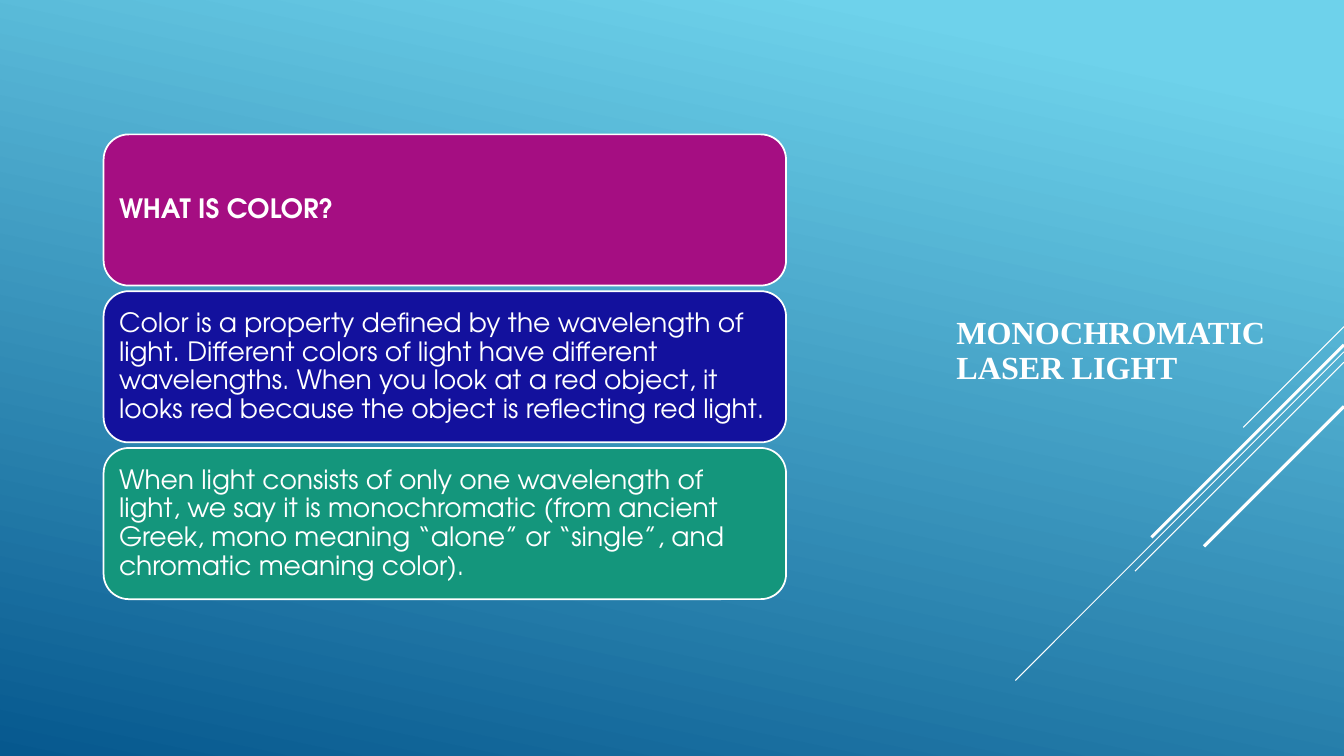
from pptx import Presentation
from pptx.dml.color import RGBColor
from pptx.enum.shapes import MSO_CONNECTOR, MSO_SHAPE
from pptx.enum.text import MSO_ANCHOR, PP_ALIGN
from pptx.oxml.ns import qn
from pptx.util import Pt
from lxml.etree import SubElement

COLORS = {
    "white": "FFFFFF",
    "sky": "6ED2EB",
    "deep": "06588E",
    "magenta": "A50E82",
    "navy": "13119D",
    "green": "14967C",
}
TITLE = "MONOCHROMATIC LASER LIGHT"
CARDS = [
    ("WHAT IS COLOR?", "magenta", True),
    ("Color is a property defined by the wavelength of light. "
     "Different colors of light have different wavelengths. "
     "When you look at a red object, it looks red because the object "
     "is reflecting red light.", "navy", False),
    ("When light consists of only one wavelength of light, we say it is "
     "monochromatic (from ancient Greek, mono meaning “alone” or “single”, "
     "and chromatic meaning color).", "green", False),
]
RAYS = [(233.3, 72, 0.75), (251.3, 234.7, 0.75), (258.7, 149.3, 0.75),
        (246.3, 137.5, 2.25), (290.3, 100, 2.25)]
WIDTH, HEIGHT = 960, 540
CARD_LEFT, CARD_TOP, CARD_W, CARD_H, CARD_GAP = 74, 96, 487.5, 108, 4


def rgb(name):
    return RGBColor.from_string(COLORS[name])


def write(sp, text, font, size, bold=False, inset=(7.2, 3.6)):
    tf = sp.text_frame
    tf.word_wrap = True
    tf.vertical_anchor = MSO_ANCHOR.MIDDLE
    tf.margin_left = tf.margin_right = Pt(inset[0])
    tf.margin_top = tf.margin_bottom = Pt(inset[1])
    p = tf.paragraphs[0]
    p.alignment = PP_ALIGN.LEFT
    p.line_spacing = 0.9
    r = p.add_run()
    r.text = text
    r.font.name = font
    r.font.size = Pt(size)
    r.font.bold = bold
    r.font.color.rgb = rgb("white")


def add_backdrop(s):
    sp = s.shapes.add_shape(MSO_SHAPE.RECTANGLE, 0, 0, Pt(WIDTH), Pt(HEIGHT))
    sp.shadow.inherit = False
    sp.line.fill.background()
    sp.fill.gradient()
    sp.fill.gradient_angle = 258
    stops = [(0.1, "sky"), (1, "deep")]
    for stop, (position, color) in zip(sp.fill.gradient_stops, stops):
        stop.position = position
        stop.color.rgb = rgb(color)


def add_ray(s, top, run, weight):
    ray = s.shapes.add_connector(MSO_CONNECTOR.STRAIGHT, Pt(WIDTH), Pt(top),
                                 Pt(WIDTH - run), Pt(top + run))
    ray.line.color.rgb = rgb("white")
    ray.line.width = Pt(weight)
    SubElement(ray._element.spPr, qn("a:effectLst"))


def add_card(s, index, text, color, bold):
    top = CARD_TOP + index * (CARD_H + CARD_GAP)
    sp = s.shapes.add_shape(MSO_SHAPE.ROUNDED_RECTANGLE, Pt(CARD_LEFT), Pt(top),
                            Pt(CARD_W), Pt(CARD_H))
    sp.shadow.inherit = False
    sp.fill.solid()
    sp.fill.fore_color.rgb = rgb(color)
    sp.line.color.rgb = rgb("white")
    sp.line.width = Pt(1.25)
    write(sp, text, "TeX Gyre Adventor", 19, bold, inset=(5.8, 5.8))


def main():
    prs = Presentation()
    prs.slide_width, prs.slide_height = Pt(WIDTH), Pt(HEIGHT)
    s = prs.slides.add_slide(prs.slide_layouts[6])
    add_backdrop(s)
    for ray in RAYS:
        add_ray(s, *ray)
    title = s.shapes.add_textbox(Pt(676), Pt(201), Pt(240), Pt(100))
    write(title, TITLE, "Times New Roman", 23, bold=True)
    for index, card in enumerate(CARDS):
        add_card(s, index, *card)
    prs.save("out.pptx")


if __name__ == "__main__":
    main()
